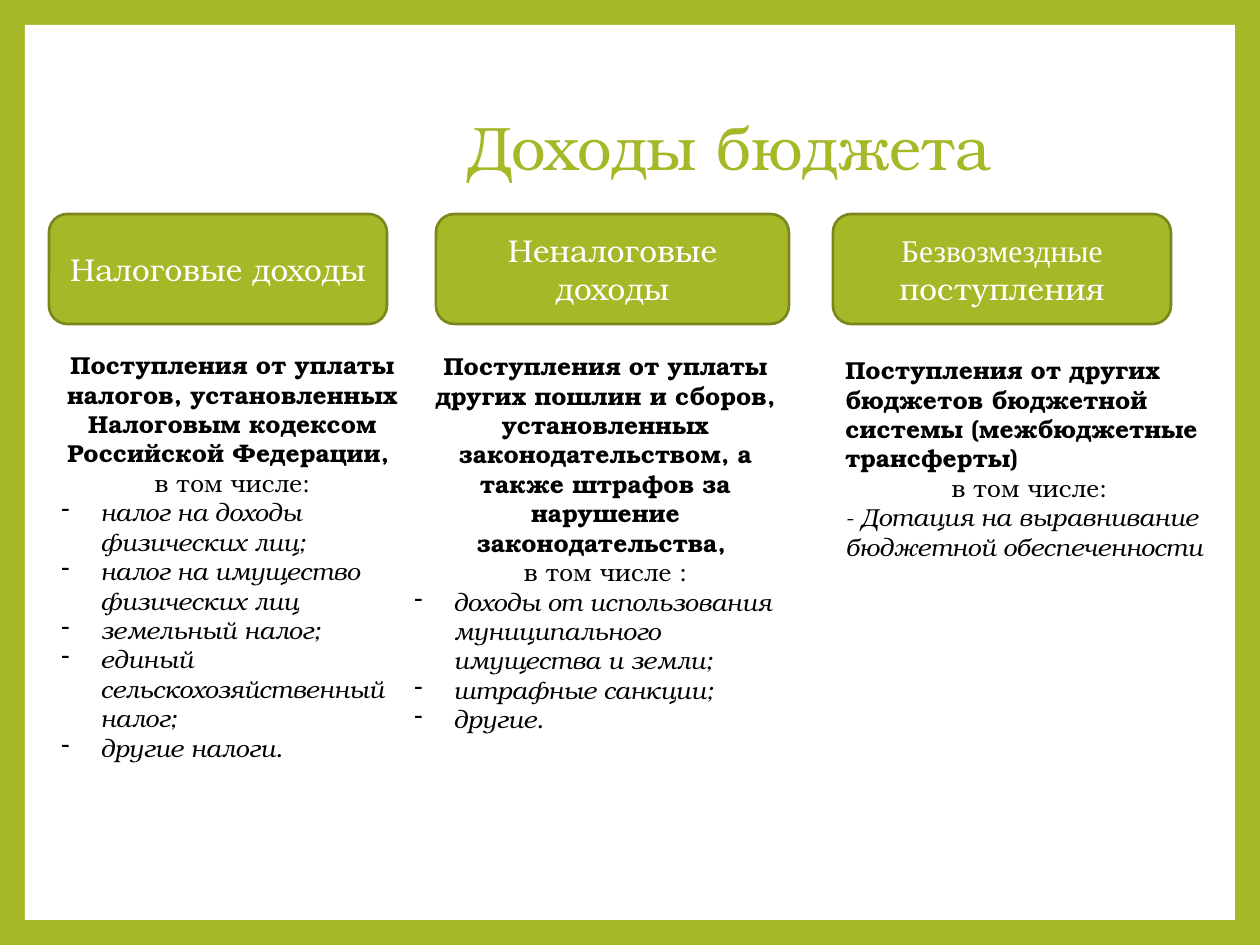
from lxml.etree import SubElement
from pptx import Presentation
from pptx.dml.color import RGBColor
from pptx.enum.shapes import MSO_SHAPE as Shape
from pptx.enum.text import MSO_ANCHOR as Anchor, MSO_AUTO_SIZE as AutoSize, PP_ALIGN as Align
from pptx.oxml.ns import qn
from pptx.util import Pt

EMU_PER_PX = 914400 / 126
SERIF, TIMES = "TeX Gyre Bonum", "Times New Roman"
COLORS = {"green": "A6B727", "outline": "7B871D", "white": "FFFFFF", "black": "000000"}
TITLE = "Доходы бюджета"
HEADER_TOP, HEADER_HEIGHT = 214, 110
BULLET_INDENT = 39

# header: (left, width, [(text, font)]); body: (left, top, width, height)
COLUMNS = [
    {
        "header": (49, 338, [("Налоговые доходы", SERIF)]),
        "body": (49, 344, 367, 459),
        "lead": "Поступления от уплаты налогов, установленных Налоговым кодексом "
                "Российской Федерации, ",
        "lead_align": Align.CENTER,
        "including": "в том числе:",
        "bulleted": True,
        "items": [
            "налог на доходы физических лиц;",
            "налог на имущество физических лиц",
            "земельный налог;",
            "единый сельскохозяйственный налог;",
            "другие налоги.",
        ],
    },
    {
        "header": (436, 353, [("Неналоговые доходы", SERIF)]),
        "body": (402, 345, 407, 398),
        "lead": "Поступления от уплаты других пошлин и сборов, установленных "
                "законодательством, а также штрафов за нарушение законодательства, ",
        "lead_align": Align.CENTER,
        "including": "в том числе :",
        "bulleted": True,
        "items": [
            "доходы от использования муниципального имущества и земли;",
            "штрафные санкции;",
            "другие.",
        ],
    },
    {
        "header": (833, 338, [("Безвозмездные ", TIMES), ("поступления", SERIF)]),
        "body": (833, 349, 393, 220),
        "lead": "Поступления от других бюджетов бюджетной системы "
                "(межбюджетные трансферты)",
        "lead_align": Align.LEFT,
        "including": "в том числе:",
        "bulleted": False,
        "items": ["- Дотация на выравнивание бюджетной обеспеченности"],
    },
]


def px(value):
    return round(value * EMU_PER_PX)


def color(name):
    return RGBColor.from_string(COLORS[name])


def add_box(slide, preset, bounds, fill, outline=None):
    shape = slide.shapes.add_shape(preset, *map(px, bounds))
    shape.shadow.inherit = False
    shape.fill.solid()
    shape.fill.fore_color.rgb = color(fill)
    if outline:
        shape.line.color.rgb = color(outline)
        shape.line.width = Pt(1.5)
    else:
        shape.line.fill.background()
    return shape


def add_text_box(slide, bounds):
    box = slide.shapes.add_textbox(*map(px, bounds))
    box.text_frame.word_wrap = True
    return box.text_frame


def add_run(paragraph, text, size, color_name, font=SERIF, bold=False, italic=False):
    run = paragraph.add_run()
    run.text = text
    run.font.name = font
    run.font.size = Pt(size)
    run.font.bold = bold
    run.font.italic = italic
    run.font.color.rgb = color(color_name)


def add_dash_bullet(paragraph):
    properties = paragraph._p.get_or_add_pPr()
    properties.set("marL", str(px(BULLET_INDENT)))
    properties.set("indent", str(-px(BULLET_INDENT)))
    SubElement(properties, qn("a:buChar")).set("char", "-")


def add_title(slide):
    frame = add_text_box(slide, (199, 115, 1061, 139))
    frame.margin_top = px(3)
    paragraph = frame.paragraphs[0]
    paragraph.alignment = Align.CENTER
    paragraph.line_spacing = 0.9
    add_run(paragraph, TITLE, 35.1, "green")


def add_header(slide, left, width, parts):
    bounds = (left, HEADER_TOP, width, HEADER_HEIGHT)
    frame = add_box(slide, Shape.ROUNDED_RECTANGLE, bounds, "green", "outline").text_frame
    frame.word_wrap = True
    frame.vertical_anchor = Anchor.MIDDLE
    paragraph = frame.paragraphs[0]
    paragraph.alignment = Align.CENTER
    for text, font in parts:
        add_run(paragraph, text, 18, "white", font)


def add_body(slide, column):
    frame = add_text_box(slide, column["body"])
    frame.auto_size = AutoSize.SHAPE_TO_FIT_TEXT

    lead = frame.paragraphs[0]
    lead.alignment = column["lead_align"]
    add_run(lead, column["lead"], 14, "black", bold=True)

    including = frame.add_paragraph()
    including.alignment = Align.CENTER
    add_run(including, column["including"], 14, "black")

    for item in column["items"]:
        paragraph = frame.add_paragraph()
        if column["bulleted"]:
            add_dash_bullet(paragraph)
        add_run(paragraph, item, 14, "black", italic=True)


def main():
    presentation = Presentation()
    presentation.slide_width, presentation.slide_height = px(1260), px(945)
    slide = presentation.slides.add_slide(presentation.slide_layouts[6])
    slide.background.fill.solid()
    slide.background.fill.fore_color.rgb = color("green")

    add_box(slide, Shape.RECTANGLE, (25, 25, 1210, 895), "white")
    add_title(slide)
    for column in COLUMNS:
        add_header(slide, *column["header"])
    for column in COLUMNS:
        add_body(slide, column)

    presentation.save("out.pptx")


if __name__ == "__main__":
    main()
